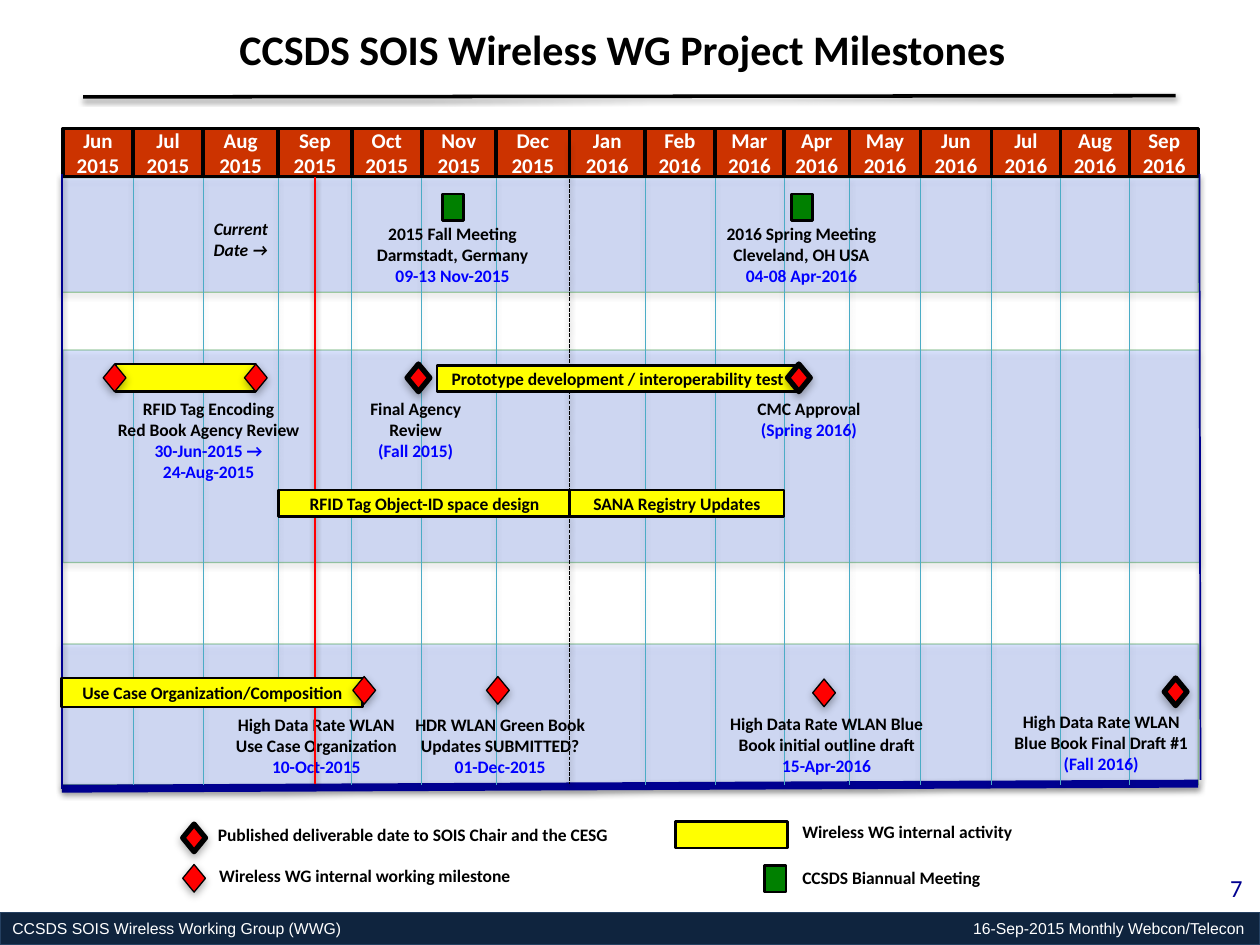
from lxml import etree
from pptx import Presentation
from pptx.dml.color import RGBColor
from pptx.enum import dml, shapes, text
from pptx.oxml.ns import qn
from pptx.util import Pt

BLACK = RGBColor(0x00, 0x00, 0x00)
WHITE = RGBColor(0xFF, 0xFF, 0xFF)
NAVY = RGBColor(0x00, 0x00, 0x90)
BLUE = RGBColor(0x00, 0x00, 0xFF)
BAND = RGBColor(0x33, 0x66, 0xFF)
GREEN = RGBColor(0x00, 0x80, 0x00)
TEAL = RGBColor(0x4B, 0xAC, 0xC6)
RUST = RGBColor(0xCC, 0x33, 0x00)
RED = RGBColor(0xFF, 0x00, 0x00)
YELLOW = RGBColor(0xFF, 0xFF, 0x00)
INK = RGBColor(0x0F, 0x24, 0x3E)
EDGE = RGBColor(0x25, 0x40, 0x61)

RECT = shapes.MSO_SHAPE.RECTANGLE
GEM = shapes.MSO_SHAPE.DIAMOND
LEFT, MID, RIGHT = text.PP_ALIGN.LEFT, text.PP_ALIGN.CENTER, text.PP_ALIGN.RIGHT
DOT, DASH = dml.MSO_LINE.ROUND_DOT, dml.MSO_LINE.SQUARE_DOT

MONTHS = "Jun Jul Aug Sep Oct Nov Dec Jan Feb Mar Apr May Jun Jul Aug Sep".split()
EDGES = [36, 76, 116, 159, 201, 241, 283.5, 325.5, 368.5,
         408.5, 448, 485.5, 526, 566.5, 606, 645.5, 685]
TOP, BASE = 101, 448
SEP, YEAR = 3, 7  # indexes of the current month and of January 2016

BANDS = [(36, 200, 121.5), (35.3, 368, 80.5), (35.3, 101.5, 65.5)]
NOTES = [  # left, top, width, black lines, blue lines
    (207.4, 123.8, 102.2, ["2015 Fall Meeting", "Darmstadt, Germany"], ["09-13 Nov-2015"]),
    (406.8, 123.8, 102.2, ["2016 Spring Meeting", "Cleveland, OH USA"], ["04-08 Apr-2016"]),
    (88.6, 121, 98, ["Current", "Date →"], []),
    (53.3, 224, 131.8, ["RFID Tag Encoding", "Red Book Agency Review"],
     ["30-Jun-2015 →", "24-Aug-2015"]),
    (190, 224, 95, ["Final Agency Review"], ["(Fall 2015)"]),
    (414.7, 224, 95, ["CMC Approval"], ["(Spring 2016)"]),
    (126, 404.6, 109.4, ["High Data Rate WLAN", "Use Case Organization"], ["10-Oct-2015"]),
    (228.2, 404.6, 115.2, ["HDR WLAN Green Book Updates SUBMITTED?"], ["01-Dec-2015"]),
    (398.9, 404, 146.9, ["High Data Rate WLAN Blue Book initial outline draft"], ["15-Apr-2016"]),
    (566.6, 402.5, 125.3, ["High Data Rate WLAN", "Blue Book Final Draft #1"], ["(Fall 2016)"]),
]
BARS = [  # left, top, width, height, label
    (66.2, 208, 80, 15.8, ""),
    (249.8, 208.8, 206, 15.1, "Prototype development / interoperability test"),
    (35.3, 387.4, 172, 16.6, "Use Case Organization/Composition"),
    (159, 280, 167, 15.1, "RFID Tag Object-ID space design"),
    (325.5, 280, 122.5, 15.1, "SANA Registry Updates"),
    (386, 469.4, 64, 15.1, ""),
]
MEETS = [(252.7, 110.9), (452.2, 110.9), (437, 494.6)]
STEPS = [(139.7, 208), (59, 208), (201.6, 386.6), (278, 386.6), (464.4, 388), (104.4, 494)]
GOALS = [(232.6, 208), (450, 208), (665.3, 387.4), (104.4, 470.9)]
KEYS = [
    (117.4, 467.3, 270, "Published deliverable date to SOIS Chair and the CESG"),
    (118.1, 491, 191, "Wireless WG internal working milestone"),
    (451.4, 465.8, 136, "Wireless WG internal activity"),
    (451.4, 491.8, 136, "CCSDS Biannual Meeting"),
]


def write(shape, lines, size=10, color=BLACK, bold=True, italic=False, font="Calibri",
          align=MID, anchor=text.MSO_ANCHOR.TOP, wrap=True, blues=()):
    """Fill a shape with paragraphs; those in blues follow in blue."""
    frame = shape.text_frame
    frame.word_wrap = wrap
    frame.auto_size = text.MSO_AUTO_SIZE.NONE
    frame.vertical_anchor = anchor
    for i, line in enumerate([*lines, *blues]):
        para = frame.paragraphs[0] if i == 0 else frame.add_paragraph()
        para.alignment = align
        run = para.add_run()
        run.text = line
        run.font.name, run.font.size = font, Pt(size)
        run.font.bold, run.font.italic = bold, italic
        run.font.color.rgb = color if i < len(lines) else BLUE


def shade(shape, alpha=38, blur=3.1, dist=1.6):
    """Cast a soft black shadow downwards."""
    effect = etree.SubElement(shape._element.spPr, qn("a:effectLst"))
    outer = etree.SubElement(effect, qn("a:outerShdw"), blurRad=str(Pt(blur)),
                             dist=str(Pt(dist)), dir="5400000", rotWithShape="0")
    fade(etree.SubElement(outer, qn("a:srgbClr"), val="000000"), alpha)


def fade(node, alpha):
    etree.SubElement(node, qn("a:alpha"), val=str(alpha * 1000))


def box(slide, x, y, w, h, fill, kind=RECT, line=BLACK, width=1.5):
    shape = slide.shapes.add_shape(kind, Pt(x), Pt(y), Pt(w), Pt(h))
    shape.fill.solid()
    shape.fill.fore_color.rgb = fill
    shape.line.color.rgb = line
    shape.line.width = Pt(width)
    shape.shadow.inherit = False
    return shape


def band(slide, x, y, h):
    shape = box(slide, x, y, 649.5, h, BAND, line=GREEN, width=0.75)
    fill, line = shape._element.spPr.iter(qn("a:srgbClr"))
    fade(fill, 18)
    fade(line, 33)
    shape._element.spPr.remove(shape._element.spPr.find(qn("a:effectLst")))
    shade(shape, 35, 3.1, 1.8)


def gem(slide, x, y, width):
    shape = box(slide, x, y, 13, 15.8, RED, kind=GEM, width=width)
    shape._element.spPr.remove(shape._element.spPr.find(qn("a:effectLst")))
    shade(shape, 35, 5, 1.8)


def rule(slide, x1, y1, x2, y2, color, width, dash=None):
    line = slide.shapes.add_connector(shapes.MSO_CONNECTOR.STRAIGHT,
                                      Pt(x1), Pt(y1), Pt(x2), Pt(y2))
    line.line.color.rgb = color
    line.line.width = Pt(width)
    if dash:
        line.line.dash_style = dash
    shade(line)
    return line


def label(slide, x, y, w, h, lines, **style):
    write(slide.shapes.add_textbox(Pt(x), Pt(y), Pt(w), Pt(h)), lines, **style)


def months(slide):
    """Draw the month cells and return them."""
    cells = []
    for i, name in enumerate(MONTHS):
        cell = box(slide, EDGES[i], 73.5, EDGES[i + 1] - EDGES[i], 27.5, RUST, width=2)
        write(cell, [name, "2015" if i < YEAR else "2016"], size=12, color=WHITE,
              anchor=text.MSO_ANCHOR.MIDDLE, wrap=False)
        cells.append(cell)
    return cells


def grid(slide):
    for i, x in enumerate(EDGES[1:-1], 1):
        if i == YEAR:
            rule(slide, x, 81.5, x, BASE, BLACK, 0.75, DASH)
        else:
            rule(slide, x, TOP + 1, x, 396 if i == SEP else BASE, TEAL, 0.25, DOT)


def footer(slide):
    strip = box(slide, 0, 521.3, 720, 18.7, INK, line=EDGE, width=0.75)
    write(strip, ["CCSDS SOIS Wireless Working Group (WWG)\t16-Sep-2015 Monthly Webcon/Telecon"],
          size=9, color=WHITE, bold=False, font="Arial", align=LEFT,
          anchor=text.MSO_ANCHOR.MIDDLE)
    props = strip.text_frame.paragraphs[0]._p.get_or_add_pPr()
    tabs = etree.SubElement(props, qn("a:tabLst"))
    etree.SubElement(tabs, qn("a:tab"), pos=str(Pt(704)), algn="r")
    label(slide, 669.6, 495.4, 47.5, 25.2, ["7"], size=14, color=NAVY, bold=False, align=RIGHT)


def head(slide):
    title = slide.shapes.title
    title.left, title.top, title.width, title.height = Pt(129.6), Pt(10), Pt(458), Pt(36)
    write(title, ["CCSDS SOIS Wireless WG Project Milestones"], size=24, align=LEFT, wrap=False)
    rule(slide, 47.5, 55.4, 671.8, 54.7, BLACK, 2)


def main():
    deck = Presentation()
    deck.slide_width, deck.slide_height = Pt(720), Pt(540)
    slide = deck.slides.add_slide(deck.slide_layouts[5])
    footer(slide)
    head(slide)
    for spot in BANDS:
        band(slide, *spot)
    rule(slide, 35.3, 450.7, 684.7, 447.8, NAVY, 4.5)
    cells = months(slide)
    grid(slide)
    for x, y, w, lines, blues in NOTES:
        label(slide, x, y, w, 7 + 12 * (len(lines) + len(blues)), lines,
              blues=blues, italic=not blues)
    today = rule(slide, 180, TOP, 180, BASE, RED, 1)
    today.begin_connect(cells[SEP], 2)
    rule(slide, 35.3, 99.4, 35.3, 450.7, NAVY, 1)
    rule(slide, 685.4, 99.4, 686, 445.7, NAVY, 1)
    for x, y, w, h, name in BARS:
        bar = box(slide, x, y, w, h, YELLOW)
        if name:
            write(bar, [name], anchor=text.MSO_ANCHOR.MIDDLE, wrap=False)
    for x, y in MEETS:
        box(slide, x, y, 12.2, 15.1, GREEN)
    for spots, width in ((STEPS, 0.75), (GOALS, 3)):
        for x, y in spots:
            gem(slide, x, y, width)
    for x, y, w, name in KEYS:
        label(slide, x, y, w, 19.4, [name], align=LEFT)
    deck.save("out.pptx")


if __name__ == "__main__":
    main()
